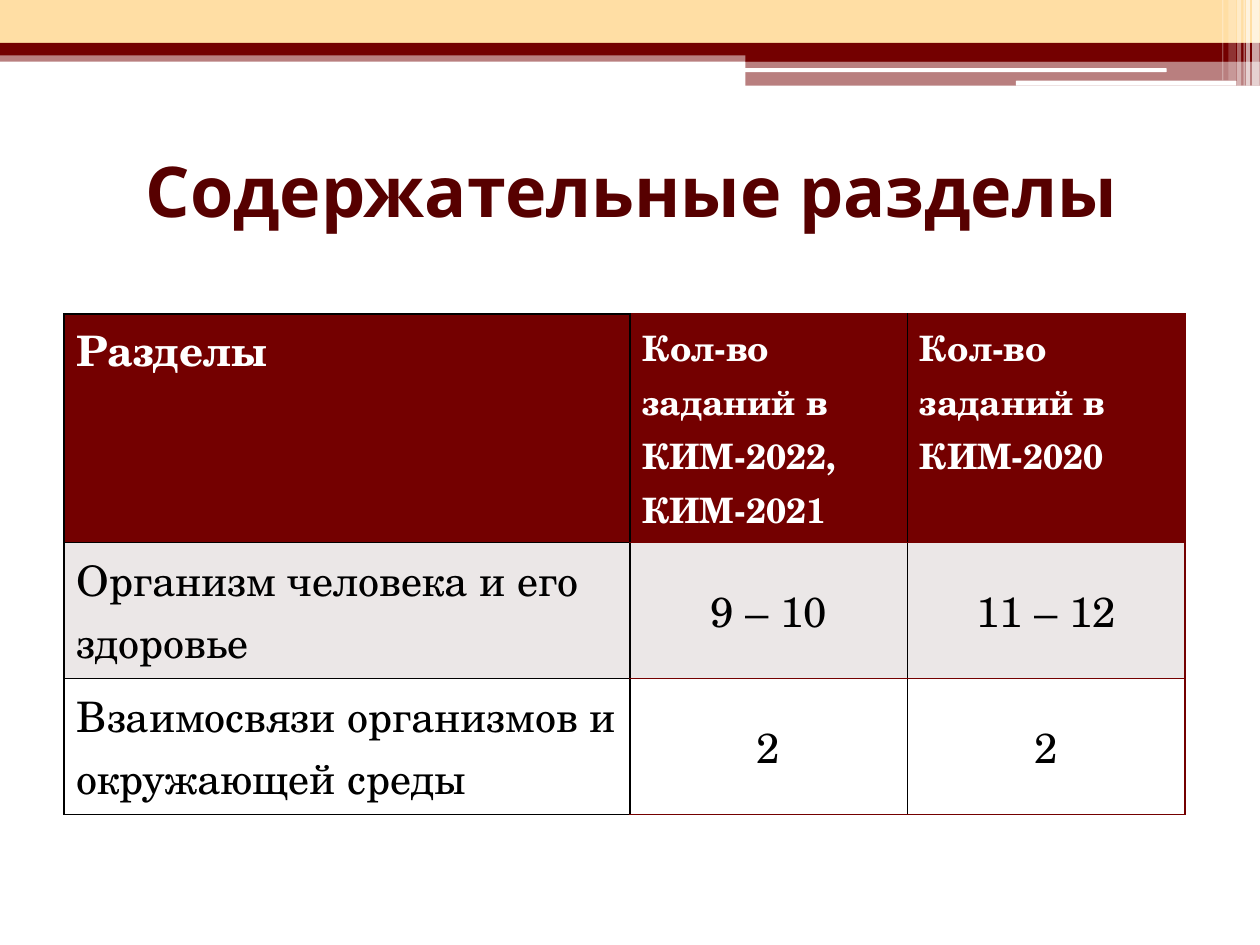
"""Build the slide with a banded header and a table of exam sections."""
from lxml import etree
from pptx import Presentation
from pptx.dml.color import RGBColor
from pptx.enum.shapes import MSO_SHAPE
from pptx.enum.text import MSO_ANCHOR, PP_ALIGN
from pptx.oxml.ns import qn
from pptx.util import Pt

RECT, ROUNDED = MSO_SHAPE.RECTANGLE, MSO_SHAPE.ROUNDED_RECTANGLE
TOP, MIDDLE = MSO_ANCHOR.TOP, MSO_ANCHOR.MIDDLE
LEFT, CENTER = PP_ALIGN.LEFT, PP_ALIGN.CENTER

TITLE_FONT, TABLE_FONT = "Karla", "TeX Gyre Schola"
COLORS = {
    "maroon": "740000",
    "title": "570000",
    "cream": "FFDEA4",
    "band": "EBE7E7",
    "white": "FFFFFF",
    "black": "000000",
}
BANDS = [
    (RECT, 0, 28.8, 720, 6.5, "maroon", 50),
    (RECT, 0, 0, 720, 24.5, "cream", 100),
    (RECT, 0, 24.5, 720, 7.2, "maroon", 100),
    (RECT, 426, 28, 294, 7.2, "maroon", 100),
    (RECT, 426, 34.6, 294, 14.4, "maroon", 50),
    (ROUNDED, 425.5, 39, 241.2, 2.2, "white", 100),
    (ROUNDED, 580.5, 46.1, 126, 2.9, "white", 100),
]
STRIPES = [
    (715.5, 4.3, 49, 65),
    (712, 2.2, 49, 65),
    (710.6, 0.7, 49, 60),
    (707, 2.2, 49, 40),
    (702, 4.3, 46, 20),
    (698.4, 0.7, 46, 30),
]
SECTIONS = [
    ("Разделы", "Кол-во\nзаданий в КИМ-2022, КИМ-2021", "Кол-во заданий в КИМ-2020"),
    ("Организм человека и его здоровье", "9 – 10", "11 – 12"),
    ("Взаимосвязи организмов и окружающей среды", "2", "2"),
]
ROW_FILLS = ["maroon", "band", "white"]
COLUMN_WIDTHS = [323.2, 158.6, 158.6]
ROW_HEIGHTS = [130.8, 77.7, 77.7]
LINE_PITCH = {24: 35.2, 20: 30.9}


def rgb(name):
    """Return a palette colour."""
    return RGBColor.from_string(COLORS[name])


def add_band(slide, preset, left, top, width, height, color, opacity):
    """Draw one borderless bar of the header ornament."""
    band = slide.shapes.add_shape(preset, Pt(left), Pt(top), Pt(width), Pt(height))
    band.shadow.inherit = False
    band.line.fill.background()
    band.fill.solid()
    band.fill.fore_color.rgb = rgb(color)
    if opacity < 100:
        tint = band.fill._xPr.find(qn("a:solidFill"))[0]
        etree.SubElement(tint, qn("a:alpha"), val=str(opacity * 1000))


def set_title(slide, text):
    """Place and format the slide title."""
    title = slide.shapes.title
    title.left, title.top, title.width, title.height = Pt(36.7), Pt(66.2), Pt(648), Pt(84.2)
    title.text_frame.text = text
    title.text_frame.vertical_anchor = MIDDLE
    heading = title.text_frame.paragraphs[0]
    heading.alignment = CENTER
    heading.font.name, heading.font.size, heading.font.bold = TITLE_FONT, Pt(40), True
    heading.font.color.rgb = rgb("title")


def set_borders(cell, sides):
    """Draw one-point cell borders in the given palette colours."""
    properties = cell._tc.get_or_add_tcPr()
    for side, color in sides.items():
        border = etree.SubElement(properties, qn(f"a:ln{side}"), w=str(Pt(1)))
        paint = etree.SubElement(border, qn("a:solidFill"))
        etree.SubElement(paint, qn("a:srgbClr"), val=COLORS[color])


def fill_cell(cell, text, row, column):
    """Write and format one table cell according to its position."""
    is_header, is_count = row == 0, column > 0
    size = 20 if is_header and is_count else 24
    horizontal = "maroon" if is_count else "black"
    right = "maroon" if column == len(COLUMN_WIDTHS) - 1 else "black"
    set_borders(cell, {"L": "black", "R": right, "T": horizontal, "B": horizontal})
    cell.fill.solid()
    cell.fill.fore_color.rgb = rgb(ROW_FILLS[row])
    centered = is_count and not is_header
    cell.vertical_anchor = MIDDLE if centered else TOP
    cell.text_frame.text = text
    for paragraph in cell.text_frame.paragraphs:
        paragraph.alignment = CENTER if centered else LEFT
        paragraph.line_spacing = Pt(LINE_PITCH[size])
        paragraph.font.name, paragraph.font.size = TABLE_FONT, Pt(size)
        paragraph.font.bold = is_header
        paragraph.font.color.rgb = rgb("white" if is_header else "black")


def add_sections_table(slide):
    """Add the table of sections and task counts."""
    table = slide.shapes.add_table(
        len(SECTIONS), len(COLUMN_WIDTHS), Pt(36.7), Pt(179.3),
        Pt(sum(COLUMN_WIDTHS)), Pt(sum(ROW_HEIGHTS))).table
    table.horz_banding = False
    for column, width in zip(table.columns, COLUMN_WIDTHS):
        column.width = Pt(width)
    for row, height in zip(table.rows, ROW_HEIGHTS):
        row.height = Pt(height)
    for row, section in enumerate(SECTIONS):
        for column, text in enumerate(section):
            fill_cell(table.cell(row, column), text, row, column)


def main():
    """Assemble and save the slide."""
    presentation = Presentation()
    presentation.slide_width, presentation.slide_height = Pt(720), Pt(540)
    slide = presentation.slides.add_slide(presentation.slide_layouts[5])
    for band in BANDS:
        add_band(slide, *band)
    for left, width, height, opacity in STRIPES:
        add_band(slide, RECT, left, 0, width, height, "white", opacity)
    set_title(slide, "Содержательные разделы")
    add_sections_table(slide)
    presentation.save("out.pptx")


if __name__ == "__main__":
    main()
